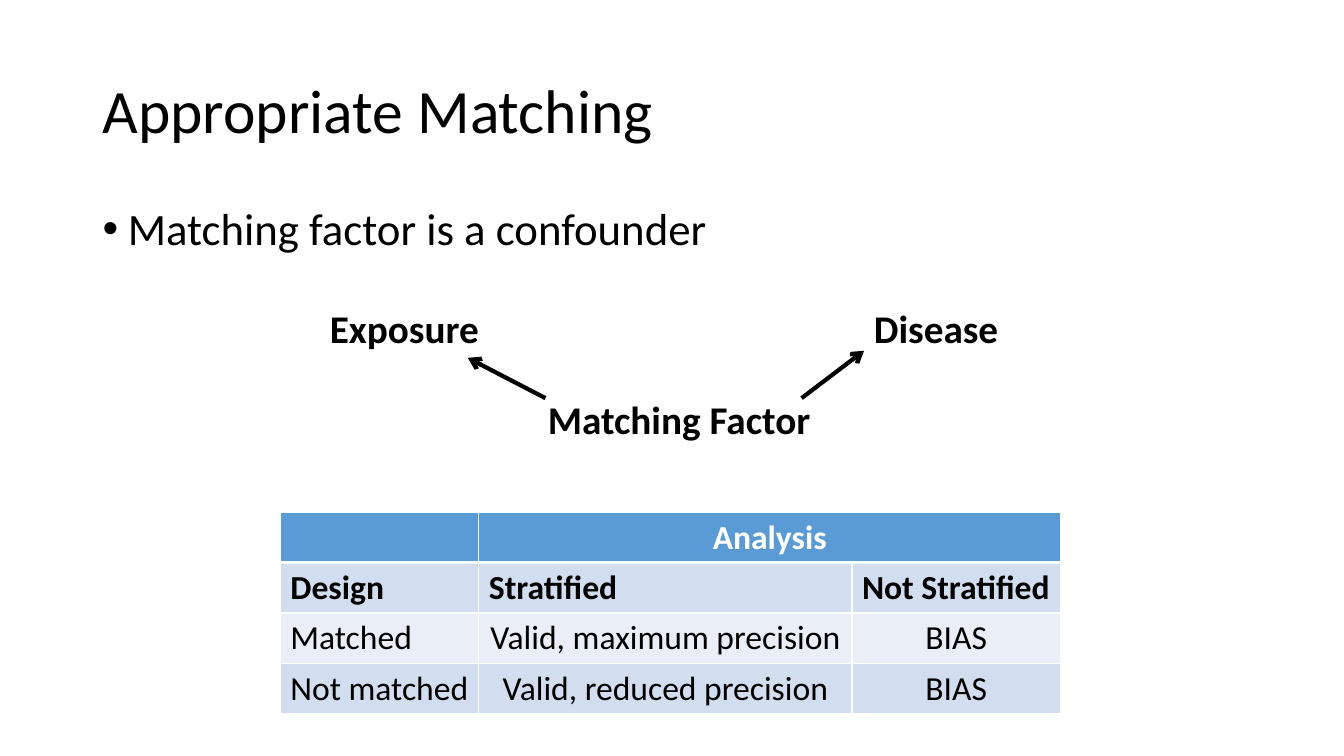
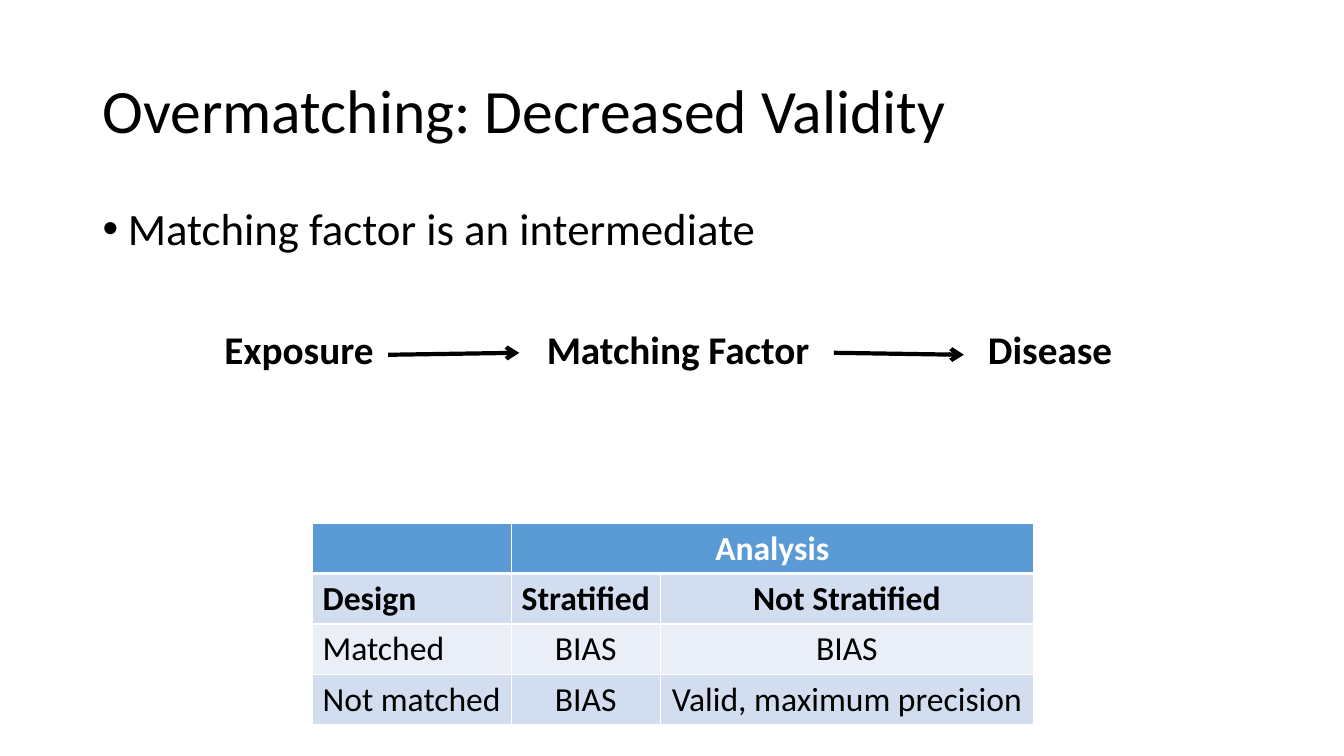
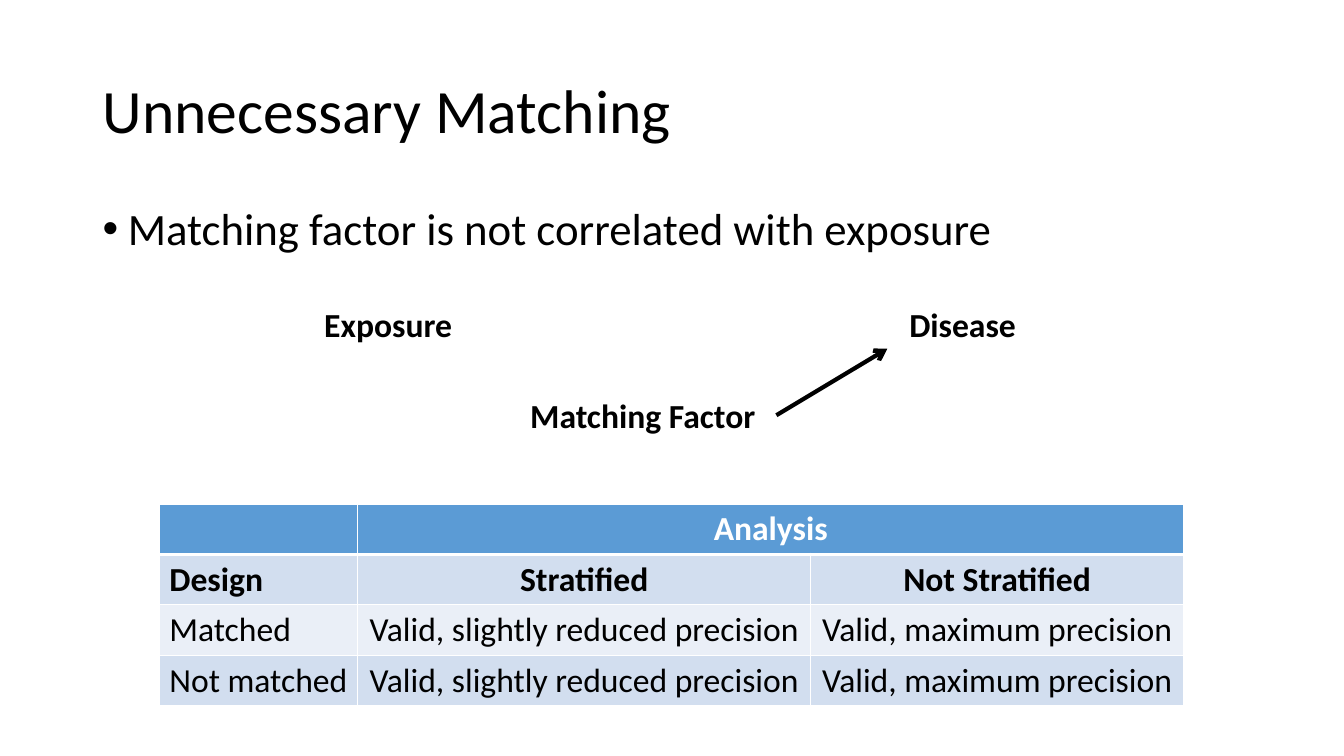
from lxml import etree
from pptx import Presentation
from pptx.dml.color import RGBColor
from pptx.enum.shapes import MSO_CONNECTOR
from pptx.enum.text import MSO_ANCHOR, MSO_AUTO_SIZE, PP_ALIGN
from pptx.oxml.ns import qn
from pptx.util import Inches, Pt

FONT = "Calibri"
COLORS = {"text": "000000", "paper": "FFFFFF", "header": "5B9BD5",
          "band_dark": "D2DEEF", "band_light": "EAEFF7"}
LEFT, CENTER = PP_ALIGN.LEFT, PP_ALIGN.CENTER
DESIGN_WIDTH = 1.97
ROW_HEIGHT = 0.5
RIGHT_SIDE = 3

# Content: label boxes are (left, top, width); arrows are (from, to),
# where either end is a point or the name of a label left at its right side
SLIDES = [
    {
        "title": "Appropriate Matching",
        "bullet": "Matching factor is a confounder",
        "label_size": 28,
        "labels": {"Exposure": (2.88, 2.97, 2.26), "Disease": (8.57, 2.97, 1.56),
                   "Matching Factor": (5.11, 3.87, 3.25)},
        "arrows": [((7.95, 3.95), (8.57, 3.48)), ((5.41, 3.95), (4.64, 3.55))],
        "table_at": (2.78, 5.08),
        "widths": (3.7, 2.07),
        "subhead_align": LEFT,
        "matched": ("Valid, maximum precision", "BIAS"),
        "not_matched": ("Valid, reduced precision", "BIAS"),
    },
    {
        "title": "Overmatching: Decreased Validity",
        "bullet": "Matching factor is an intermediate",
        "label_size": 28,
        "labels": {"Exposure": (1.39, 3.18, 3.15), "Disease": (9.7, 3.18, 2.17),
                   "Matching Factor": (4.46, 3.18, 4.53)},
        "arrows": [((3.85, 3.52), (5.15, 3.5)), ((8.27, 3.5), (9.56, 3.52))],
        "table_at": (3.1, 5.19),
        "widths": (1.48, 3.7),
        "subhead_align": CENTER,
        "matched": ("BIAS", "BIAS"),
        "not_matched": ("BIAS", "Valid, maximum precision"),
    },
    {
        "title": "Unnecessary Matching",
        "bullet": "Matching factor is not correlated with exposure",
        "label_size": 24,
        "labels": {"Exposure": (2.93, 2.97, 1.84), "Disease": (8.92, 2.97, 1.27),
                   "Matching Factor": (5.05, 3.87, 2.65)},
        "arrows": [("Matching Factor", (8.8, 3.46))],
        "table_at": (1.58, 5),
        "widths": (4.49, 3.7),
        "subhead_align": CENTER,
        "matched": ("Valid, slightly reduced precision", "Valid, maximum precision"),
        "not_matched": ("Valid, slightly reduced precision", "Valid, maximum precision"),
    },
]


def color(name):
    return RGBColor.from_string(COLORS[name])


def write(paragraph, text, size, bold=False, align=LEFT, ink="text"):
    paragraph.alignment = align
    run = paragraph.add_run()
    run.text = text
    run.font.name = FONT
    run.font.size = Pt(size)
    run.font.bold = bold
    run.font.color.rgb = color(ink)


def add_box(slide, left, top, width, height):
    box = slide.shapes.add_textbox(*map(Inches, (left, top, width, height)))
    box.text_frame.word_wrap = True
    return box


def add_heading(slide, title, bullet):
    frame = add_box(slide, 0.92, 0.4, 11.5, 1.45).text_frame
    frame.vertical_anchor = MSO_ANCHOR.MIDDLE
    frame.paragraphs[0].line_spacing = 0.9
    write(frame.paragraphs[0], title, 44)

    paragraph = add_box(slide, 0.92, 2, 11.5, 4.76).text_frame.paragraphs[0]
    paragraph.line_spacing = 0.9
    paragraph.space_before = Pt(10)
    properties = paragraph._p.get_or_add_pPr()
    properties.set("marL", str(Inches(0.25)))
    properties.set("indent", str(Inches(-0.25)))
    etree.SubElement(properties, qn("a:buFont"), typeface="Arial")
    etree.SubElement(properties, qn("a:buChar"), char="•")
    write(paragraph, bullet, 32)


# Causal diagram
def add_label(slide, text, place, size):
    box = add_box(slide, *place, 0.57 if size == 28 else 0.5)
    box.text_frame.auto_size = MSO_AUTO_SIZE.SHAPE_TO_FIT_TEXT
    align = LEFT if text == "Disease" else CENTER
    write(box.text_frame.paragraphs[0], text, size, True, align)
    return box


def add_arrow(slide, start, end, boxes):
    source = boxes.get(start)
    begin = end if source else start
    arrow = slide.shapes.add_connector(MSO_CONNECTOR.STRAIGHT,
                                       *map(Inches, (*begin, *end)))
    if source:
        arrow.begin_connect(source, RIGHT_SIDE)
    arrow.line.color.rgb = color("text")
    arrow.line.width = Pt(3)
    etree.SubElement(arrow.line._get_or_add_ln(), qn("a:tailEnd"), type="arrow")
    etree.SubElement(arrow._element.spPr, qn("a:effectLst"))


# Results table
def style_cell(cell, fill, row):
    properties = cell._tc.get_or_add_tcPr()
    weights = {"L": 1, "R": 1, "T": 3 if row == 1 else 1, "B": 3 if row == 0 else 1}
    for side, weight in weights.items():
        line = etree.SubElement(properties, qn(f"a:ln{side}"), w=str(Pt(weight)))
        solid = etree.SubElement(line, qn("a:solidFill"))
        etree.SubElement(solid, qn("a:srgbClr"), val=COLORS["paper"])
    cell.fill.solid()
    cell.fill.fore_color.rgb = color(fill)


def add_results(slide, content):
    rows = [("", "Analysis", ""),
            ("Design", "Stratified", "Not Stratified"),
            ("Matched", *content["matched"]),
            ("Not matched", *content["not_matched"])]
    fills = ("header", "band_dark", "band_light", "band_dark")
    widths = (DESIGN_WIDTH, *content["widths"])
    size = (sum(widths), ROW_HEIGHT * len(rows))
    table = slide.shapes.add_table(len(rows), len(widths),
                                   *map(Inches, (*content["table_at"], *size))).table
    for column, width in zip(table.columns, widths):
        column.width = Inches(width)
    for r, (texts, fill) in enumerate(zip(rows, fills)):
        for c, text in enumerate(texts):
            cell = table.cell(r, c)
            style_cell(cell, fill, r)
            if not text:
                continue
            align = LEFT if c == 0 else content["subhead_align"] if r == 1 else CENTER
            write(cell.text_frame.paragraphs[0], text, 24, r < 2, align,
                  "paper" if r == 0 else "text")
    table.cell(0, 1).merge(table.cell(0, 2))
    table.cell(0, 1).vertical_anchor = MSO_ANCHOR.MIDDLE


def main():
    presentation = Presentation()
    presentation.slide_width, presentation.slide_height = Inches(13.33), Inches(7.5)
    for content in SLIDES:
        slide = presentation.slides.add_slide(presentation.slide_layouts[6])
        add_heading(slide, content["title"], content["bullet"])
        add_results(slide, content)
        boxes = {text: add_label(slide, text, place, content["label_size"])
                 for text, place in content["labels"].items()}
        for start, end in content["arrows"]:
            add_arrow(slide, start, end, boxes)
    presentation.save("out.pptx")


if __name__ == "__main__":
    main()
